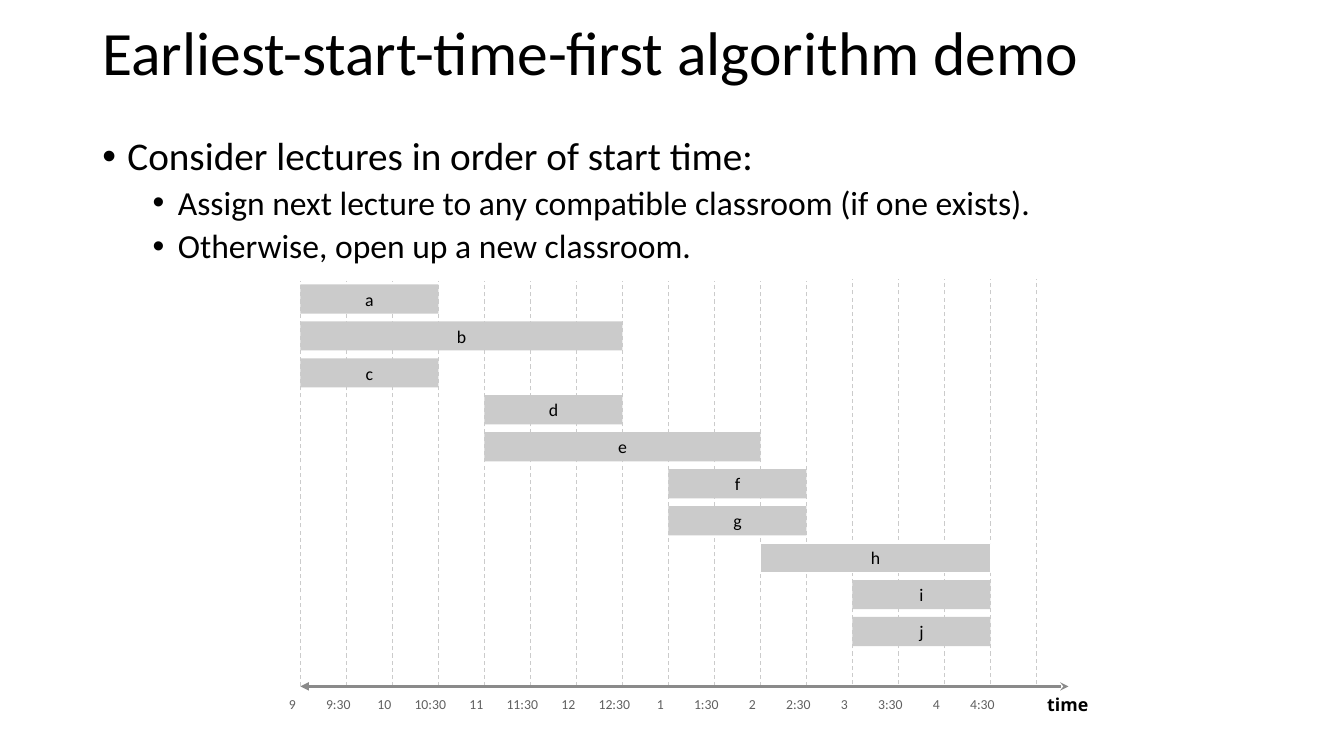
import pptx
import pptx.util
import pptx.dml.color
import pptx.enum.dml
import pptx.enum.shapes
import pptx.enum.text
import pptx.oxml
import pptx.oxml.ns

Pt = pptx.util.Pt
ALIGN = pptx.enum.text.PP_ALIGN
ANCHOR = pptx.enum.text.MSO_ANCHOR
COLORS = {"ink": "000000", "bar": "CBCBCB", "axis": "8A8A8A",
          "hour": "606060", "white": "FFFFFF"}

BULLETS = [
    (0, "Consider lectures in order of start time:"),
    (1, "Assign next lecture to any compatible classroom (if one exists)."),
    (1, "Otherwise, open up a new classroom."),
]
# Name, first and last half-hour slot counted from 9
LECTURES = [("a", 0, 3), ("b", 0, 7), ("c", 0, 3), ("d", 4, 7), ("e", 4, 10),
            ("f", 8, 11), ("g", 8, 11), ("h", 10, 15), ("i", 12, 15), ("j", 12, 15)]
HOURS = [9, 10, 11, 12, 1, 2, 3, 4]
TIMES = [f"{hour}{half}" for hour in HOURS for half in ("", ":30")]


def color(name):
    return pptx.dml.color.RGBColor.from_string(COLORS[name])


def style(para, size, tone="ink", font="Calibri", bold=False):
    for run in para.runs:
        run.font.size = Pt(size)
        run.font.name = font
        run.font.bold = bold
        run.font.color.rgb = color(tone)


def trim(frame):
    frame.margin_left = frame.margin_right = 0
    frame.margin_top = frame.margin_bottom = 0


def add_note(slide, box, text, size, **look):
    frame = slide.shapes.add_textbox(*map(Pt, box)).text_frame
    frame.word_wrap = True
    frame.text = text
    style(frame.paragraphs[0], size, **look)
    return frame


def add_line(slide, ends, tone, width):
    line = slide.shapes.add_connector(
        pptx.enum.shapes.MSO_CONNECTOR.STRAIGHT, *map(Pt, ends))
    line.line.color.rgb = color(tone)
    line.line.width = Pt(width)
    props = line._element.spPr
    props.append(pptx.oxml.parse_xml(
        f'<a:effectLst {pptx.oxml.ns.nsdecls("a")}/>'))
    return line


def add_title(slide, box):
    frame = add_note(slide, box, "Earliest-start-time-first algorithm demo", 44)
    frame.vertical_anchor = ANCHOR.MIDDLE
    frame.paragraphs[0].line_spacing = 0.9


def add_body(slide, box):
    frame = slide.shapes.add_textbox(*map(Pt, box)).text_frame
    frame.word_wrap = True
    frame.text = "\n".join(text for _, text in BULLETS)
    for para, (level, _) in zip(frame.paragraphs, BULLETS):
        style(para, 24 if level else 28)
        para.level = level
        para.line_spacing = 0.9
        para.space_before = Pt(5 if level else 10)
        props = para._p.get_or_add_pPr()
        props.set("marL", str(Pt(18 + 36 * level)))
        props.set("indent", str(-Pt(18)))
        for xml in ('buFont {} typeface="Arial"', 'buChar {} char="•"'):
            xml = xml.format(pptx.oxml.ns.nsdecls("a"))
            props.append(pptx.oxml.parse_xml(f"<a:{xml}/>"))


def add_bar(slide, box, name):
    bar = slide.shapes.add_shape(
        pptx.enum.shapes.MSO_SHAPE.RECTANGLE, *map(Pt, box))
    bar.shadow.inherit = False
    bar.fill.solid()
    bar.fill.fore_color.rgb = color("bar")
    bar.line.fill.background()
    frame = bar.text_frame
    trim(frame)
    frame.vertical_anchor = ANCHOR.MIDDLE
    frame.text = name
    frame.paragraphs[0].alignment = ALIGN.CENTER
    style(frame.paragraphs[0], 12.7)
    return bar


def add_chart(slide, box):
    left, top, width, height = box
    step = width / len(TIMES)
    base = top + height

    # Half-hour grid, raised slightly from 3 onwards
    for slot in range(len(TIMES) + 1):
        x = left + slot * step
        lift = 1.4 if slot >= 12 else 0
        line = add_line(slide, (x, base - lift, x, top - lift), "bar", 0.75)
        line.line.dash_style = pptx.enum.dml.MSO_LINE.DASH

    # Lecture bars
    for row, (name, start, end) in enumerate(LECTURES):
        spot = (left + start * step, top + 2.2 + row * 26.4,
                (end - start) * step, 20.9)
        bar = add_bar(slide, spot, name)
        if name == "h":
            bar.line.color.rgb = color("white")
            bar.line.width = Pt(0.75)

    # Time labels, set a little left of their grid lines
    for slot, time in enumerate(TIMES):
        spot = (left + (slot - 0.5) * step - 5.8, base + 6.5, step, 12.2)
        frame = add_note(slide, spot, time, 9.8, tone="hour")
        trim(frame)
        frame.paragraphs[0].alignment = ALIGN.CENTER

    # Time axis
    axis = add_line(slide, (left, base, base + 272.9, base), "axis", 2)
    stroke = axis.line._get_or_add_ln()
    for end, kind in (("headEnd", "triangle"), ("tailEnd", "stealth")):
        stroke.append(pptx.oxml.parse_xml(
            f'<a:{end} {pptx.oxml.ns.nsdecls("a")} type="{kind}"/>'))
    spot = (left + width + 7.6, base + 5, 52.6, 15.2)
    trim(add_note(slide, spot, "time", 12.7, font="Open Sans", bold=True))


def main():
    deck = pptx.Presentation()
    deck.slide_width, deck.slide_height = Pt(960), Pt(540)
    slide = deck.slides.add_slide(deck.slide_layouts[6])
    add_title(slide, (66, 5.8, 828, 68.4))
    add_body(slide, (66, 94.3, 828, 342.7))
    add_chart(slide, (214.6, 200.9, 525.8, 289.4))
    deck.save("out.pptx")


if __name__ == "__main__":
    main()
